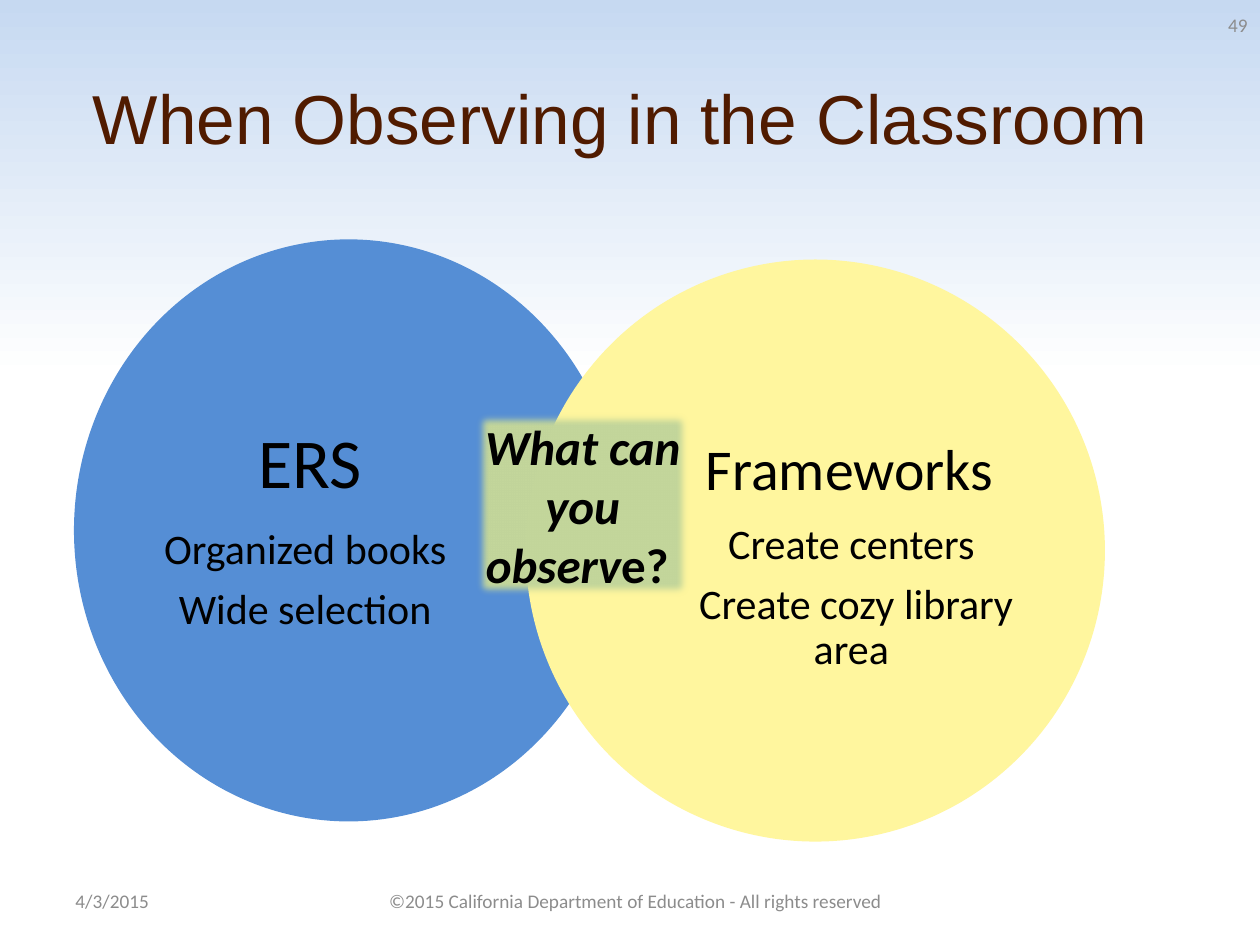
from lxml import etree
from pptx import Presentation
from pptx.dml.color import RGBColor
from pptx.enum import shapes, text
from pptx.oxml import ns
from pptx.util import Pt

SKY = RGBColor(0xC6, 0xD9, 0xF1)
WHITE = RGBColor(0xFF, 0xFF, 0xFF)
BROWN = RGBColor(0x50, 0x1B, 0x00)
BLUE = RGBColor(0x55, 0x8E, 0xD5)
YELLOW = RGBColor(0xFF, 0xF6, 0x9E)
GREEN = RGBColor(0xC3, 0xD6, 0x9B)
GREY = RGBColor(0x8C, 0x8C, 0x8C)
BLACK = RGBColor(0, 0, 0)

LEFT, MID, RIGHT = text.PP_ALIGN.LEFT, text.PP_ALIGN.CENTER, text.PP_ALIGN.RIGHT
OVAL, RECT = shapes.MSO_SHAPE.OVAL, shapes.MSO_SHAPE.RECTANGLE

# Boxes are left, top, width, height in points.
TITLE = ("When Observing in the Classroom ", (36, 21.6, 648, 90))
CIRCLES = [
    (BLUE, (42.3, 136.8, 313.9, 332.6), (86.4, 176.4, 181.4, 254.2), 40,
     ["ERS", "Organized books ", "Wide selection "]),
    (YELLOW, (300.4, 148.3, 331, 332.6), (393.8, 191.2, 190.8, 254.2), 33,
     ["Frameworks ", "Create centers ", "Create cozy library area "]),
]
NOTES = [
    ("4/3/2015", (36, 500.4, 167.8, 28.8), LEFT),
    ("©2015 California Department of Education - All rights reserved",
     (138.2, 500.4, 450, 28.8), MID),
    ("49", (552.2, 0, 167.8, 28.8), RIGHT),
]
CORE = ([("What can you observ", True), ("e? ", False)], (270, 234, 126, 108.7))
ITEM = 24
AFTER = 0.35


def style(para, size, color, align=MID, face="Calibri"):
    para.alignment = align
    para.font.size, para.font.name = Pt(size), face
    para.font.color.rgb = color


def add_text(slide, box, lines, color, align=MID, face="Calibri", inset=None):
    """Add a middle-anchored text box; lines are (words, size) pairs."""
    frame = slide.shapes.add_textbox(*map(Pt, box)).text_frame
    frame.word_wrap = True
    frame.vertical_anchor = text.MSO_ANCHOR.MIDDLE
    if inset is not None:
        frame.margin_left = frame.margin_right = Pt(inset)
        frame.margin_top = frame.margin_bottom = Pt(inset)
    for i, (words, size) in enumerate(lines):
        para = frame.add_paragraph() if i else frame.paragraphs[0]
        para.text = words
        style(para, size, color, align, face)
    return frame


def add_solid(slide, kind, box, color):
    shape = slide.shapes.add_shape(kind, *map(Pt, box))
    shape.shadow.inherit = False
    shape.fill.solid()
    shape.fill.fore_color.rgb = color
    shape.line.fill.background()
    return shape


def add_core(slide, runs, box):
    shape = add_solid(slide, RECT, box, GREEN)
    effects = shape.element.spPr.find(ns.qn("a:effectLst"))
    etree.SubElement(effects, ns.qn("a:softEdge")).set("rad", str(Pt(5)))
    shape.text_frame.word_wrap = True
    para = shape.text_frame.paragraphs[0]
    style(para, 28, BLACK)
    para.font.bold = True
    for words, slant in runs:
        run = para.add_run()
        run.text = words
        run.font.italic = slant


def paint(slide):
    fill = slide.background.fill
    fill.gradient()
    fill.gradient_angle = 270
    for stop, place, color in zip(fill.gradient_stops, (0, 0.4), (SKY, WHITE)):
        stop.position = place
        stop.color.rgb = color


def main():
    deck = Presentation()
    deck.slide_width, deck.slide_height = Pt(720), Pt(540)
    slide = deck.slides.add_slide(deck.slide_layouts[6])
    paint(slide)
    words, box = TITLE
    add_text(slide, box, [(words, 39.6)], BROWN, face="Arial")
    for color, disc, box, size, (head, *items) in CIRCLES:
        add_solid(slide, OVAL, disc, color)
        lines = [(head, size)] + [(item, ITEM) for item in items]
        frame = add_text(slide, box, lines, BLACK, inset=0)
        for para in frame.paragraphs:
            para.line_spacing = 0.9
            para.space_after = Pt(round(para.font.size.pt * AFTER, 1))
    for words, box, align in NOTES:
        add_text(slide, box, [(words, 11)], GREY, align)
    add_core(slide, *CORE)
    deck.save("out.pptx")


if __name__ == "__main__":
    main()
